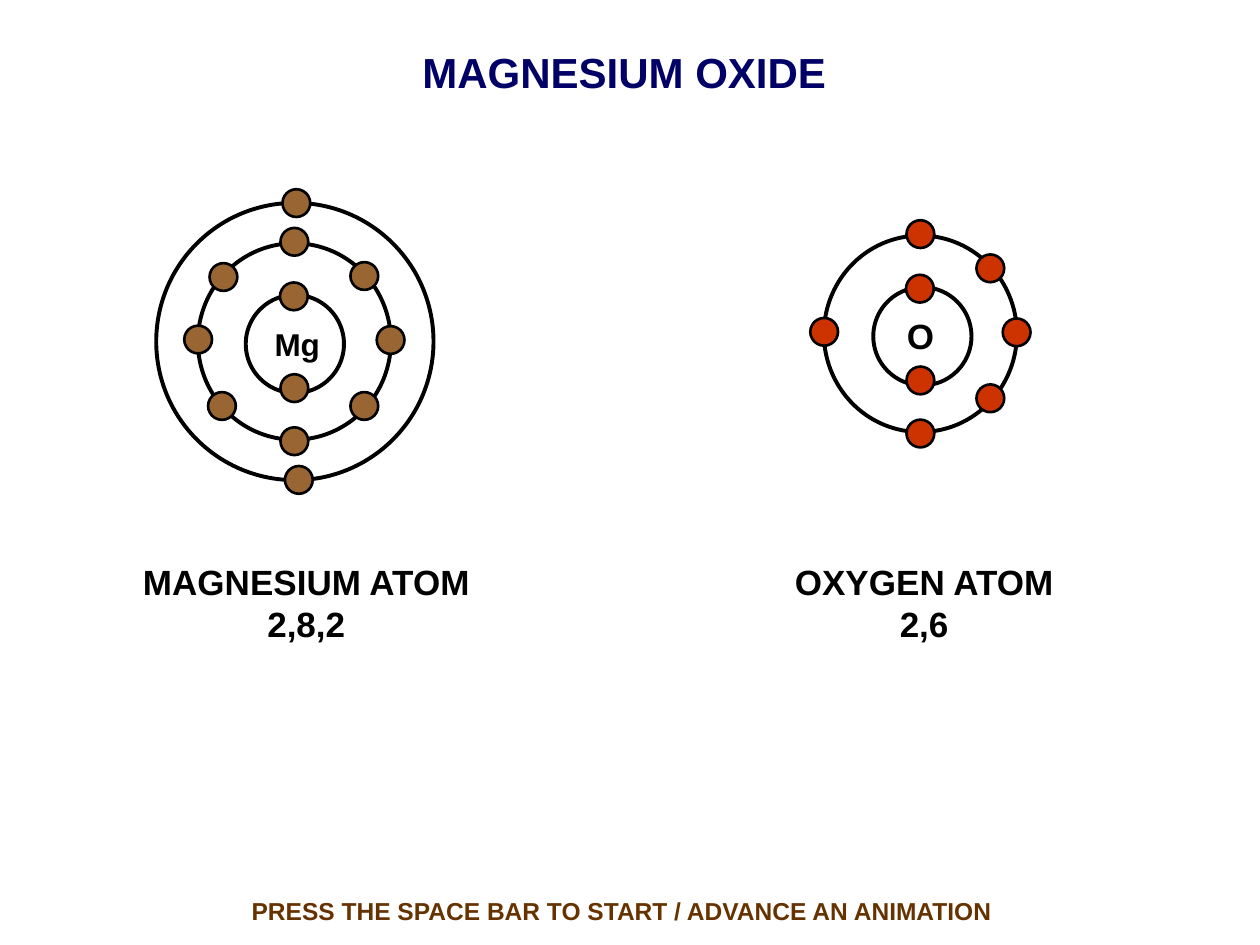
from pptx import Presentation
from pptx import util as u
from pptx.dml.color import RGBColor
from pptx.enum import shapes, text

MID, DOT = (3.89, 3.96), (0.56, 0.56)
INNER, OUTER = (1.98, 1.98), (5.59, 5.59)
SHARED = [(1.94, -0.03), (-1.94, -0.04), (0, -2.01), (0, 2.01),
          (1.41, -1.32), (1.41, 1.3), (-0.01, -0.91), (0, 0.94)]
EXTRA = [(-1.43, -1.3), (-1.46, 1.3), (0.04, -2.79), (0.09, 2.79)]


def paint(color, code):
    color.rgb = RGBColor.from_string(code)


def label(slide, box, lines, size, code, wrap=True):
    frame = slide.shapes.add_textbox(*map(u.Cm, box)).text_frame
    frame.word_wrap = wrap
    frame.text = "\n".join(lines)
    style = {"name": "Arial", "size": u.Pt(size), "bold": True}
    for par in frame.paragraphs:
        par.alignment = text.PP_ALIGN.CENTER if wrap else text.PP_ALIGN.LEFT
        for key, value in style.items():
            setattr(par.font, key, value)
        paint(par.font.color, code)


def ring(slide, mid, size, width, code=None):
    box = [c - s / 2 for c, s in zip(mid, size)] + list(size)
    oval = slide.shapes.add_shape(shapes.MSO_SHAPE.OVAL, *map(u.Cm, box))
    oval.shadow.inherit = False
    oval.line.width = u.Pt(width)
    paint(oval.line.color, "000000")
    if code:
        oval.fill.solid()
        paint(oval.fill.fore_color, code)
    else:
        oval.fill.background()


def atom(slide, box, shells, dots, code, sign):
    left, top, wide, high = box
    x, y = left + wide / 2, top + high / 2
    for dx, dy, size in shells:
        ring(slide, (x + dx, y + dy), size, 2.25)
    for dx, dy in dots:
        ring(slide, (x + dx, y + dy), DOT, 1.5, code)
    name, size, dx, dy, w, h = sign
    label(slide, (x + dx - w / 2, y + dy - h / 2, w, h),
          [name], size, "000000", False)


def main():
    deck = Presentation()
    deck.slide_width, deck.slide_height = u.Cm(25.4), u.Cm(19.05)
    slide = deck.slides.add_slide(deck.slide_layouts[6])
    label(slide, (5.28, 0.81, 14.61, 1.27), ["MAGNESIUM OXIDE"], 24, "000066")
    atom(slide, (3.14, 4.09, 5.59, 5.59),
         [(0, 0, MID), (0.01, 0.05, INNER), (0.01, 0, OUTER)],
         SHARED + EXTRA, "996633", ("Mg", 18, 0.06, 0.05, 1.42, 1.02))
    atom(slide, (16.61, 4.75, 3.89, 3.96),
         [(0, 0, MID), (0.04, 0.05, INNER)],
         SHARED, "CC3300", ("O", 20, 0.01, 0.04, 1.07, 1.09))
    for left, wide, lines in [(2.49, 7.37, ["MAGNESIUM ATOM", "2,8,2"]),
                              (14.68, 7.9, ["OXYGEN ATOM", "2,6"])]:
        label(slide, (left, 11.18, wide, 1.96), lines, 20, "000000")
    label(slide, (3.15, 17.93, 18.77, 0.84),
          ["PRESS THE SPACE BAR TO START / ADVANCE AN ANIMATION"],
          14, "663300")
    deck.save("out.pptx")


if __name__ == "__main__":
    main()
